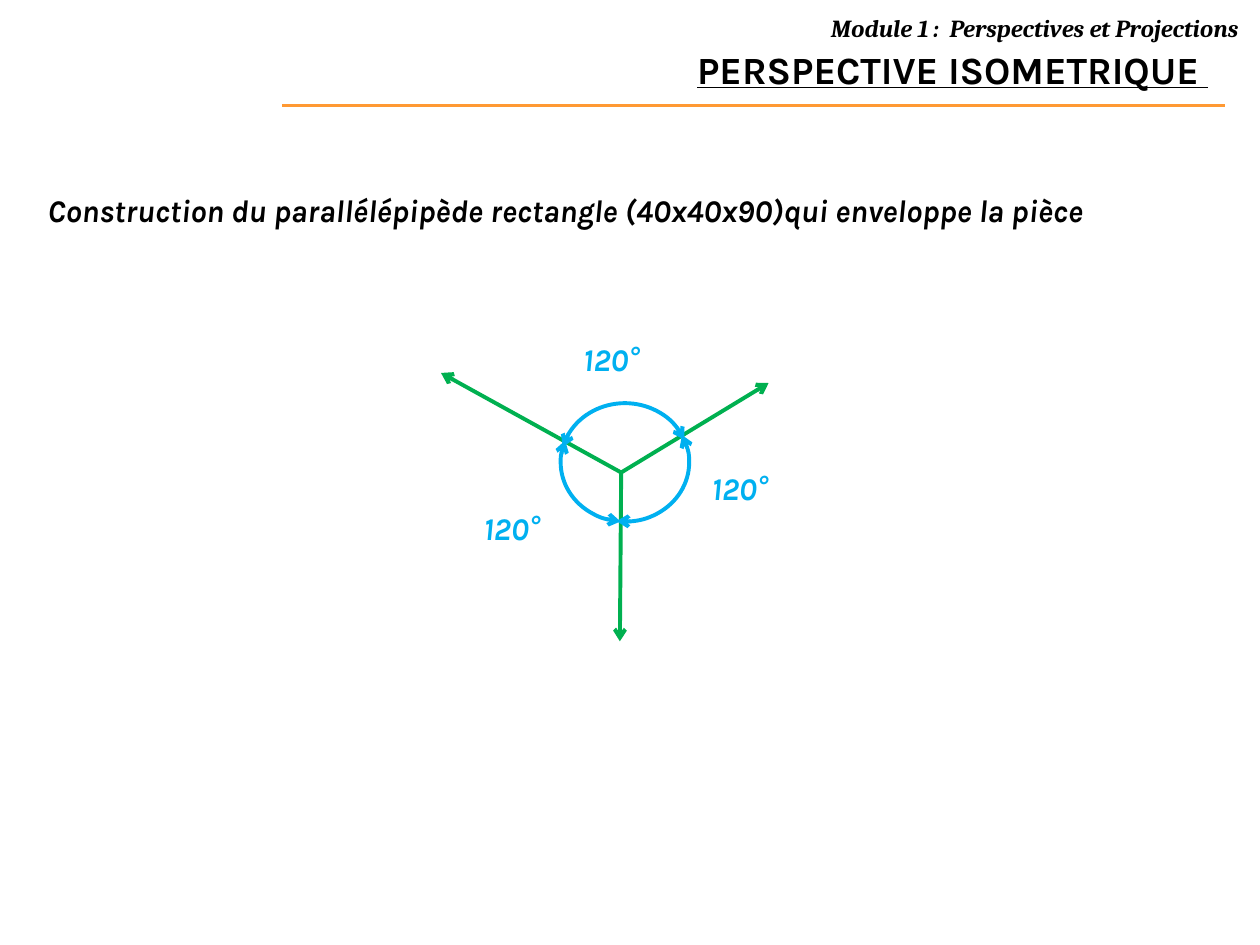
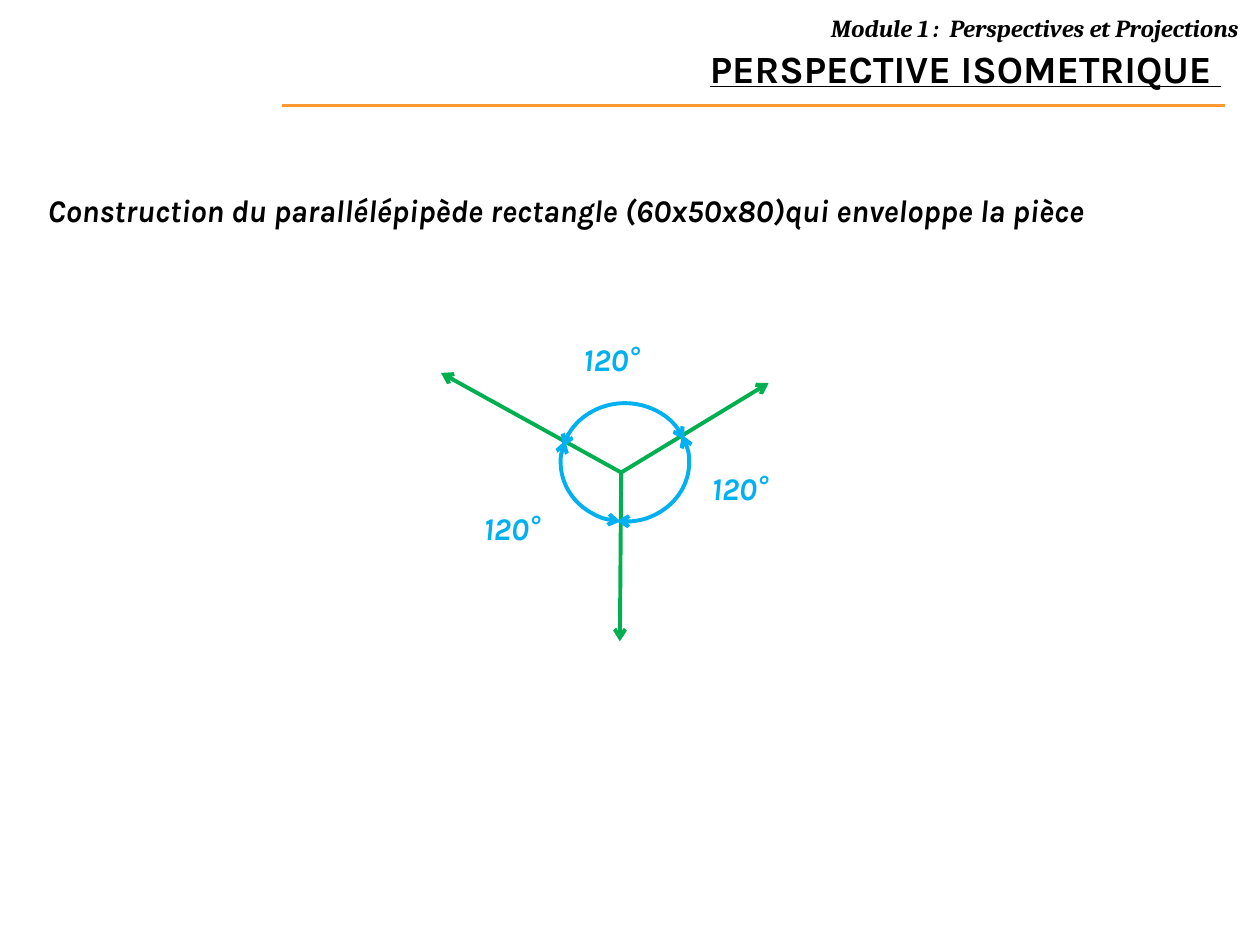
import collections
import dataclasses

import pptx
import pptx.dml.color
import pptx.enum.shapes
import pptx.enum.text
import pptx.oxml.ns
import pptx.util
from lxml import etree

EMU_PER_PX = 9144
ALIGN = pptx.enum.text.PP_ALIGN
SHAPE = pptx.enum.shapes.MSO_SHAPE
Box = collections.namedtuple("Box", "left top width height")


@dataclasses.dataclass(frozen=True)
class Theme:
    """Hold the colours, fonts, type sizes and line widths of the deck."""
    paper: str = "FFFFFF"
    ink: str = "000000"
    rule: str = "FF9933"
    axis: str = "00B050"
    angle: str = "00B0F0"
    module_font: str = "Cambria"
    text_font: str = "Karla"
    module_size: int = 14
    title_size: int = 22
    body_size: int = 18
    rule_width: float = 1.5
    drawing_width: float = 2.25


THEME = Theme()
MODULE_TEXT = "Module 1 :  Perspectives et Projections"
TITLE_TEXT = "PERSPECTIVE ISOMETRIQUE "
HEADER = Box(224, 2, 769, 82)
STATEMENT = Box(28, 147, 937, 58)
DIAGRAM = Box(350, 265, 284, 244)
SLIDES = [
    (Box(201, 32, 768, 117), "40x40x90"),
    (Box(211, 31, 768, 117), "60x50x80"),
]


def px(*lengths):
    """Turn lengths in px into EMU."""
    return [pptx.util.Emu(length * EMU_PER_PX) for length in lengths]


def rgb(colour):
    """Turn a hex string into a colour."""
    return pptx.dml.color.RGBColor.from_string(colour)


def write(shape, text, colour, align=ALIGN.LEFT, **font_format):
    """Write one bold paragraph into a shape and return the paragraph."""
    frame = shape.text_frame
    frame.word_wrap = True
    frame.vertical_anchor = pptx.enum.text.MSO_ANCHOR.TOP
    para = frame.paragraphs[0]
    para.alignment = align
    span = para.add_run()
    span.text = text
    span.font.color.rgb = rgb(colour)
    for name, value in {"bold": True, **font_format}.items():
        setattr(span.font, name, value)
    return para


def body_text(page, box, text, colour):
    """Add a text box in the bold italic body style."""
    write(page.shapes.add_textbox(*px(*box)), text, colour, italic=True,
          name=THEME.text_font, size=pptx.util.Pt(THEME.body_size))


def style_line(shape, colour, width, arrows=()):
    """Set colour and width of a line and add arrowheads at the named ends."""
    shape.line.color.rgb = rgb(colour)
    shape.line.width = pptx.util.Pt(width)
    for end in arrows:
        etree.SubElement(shape.line._get_or_add_ln(), pptx.oxml.ns.qn(f"a:{end}"), type="arrow")


def straight_line(page, start, end, colour, width, arrows=()):
    """Add a straight connector without a shadow."""
    line = page.shapes.add_connector(
        pptx.enum.shapes.MSO_CONNECTOR.STRAIGHT, *px(*start, *end))
    style_line(line, colour, width, arrows)
    etree.SubElement(line._element.spPr, pptx.oxml.ns.qn("a:effectLst"))


def draw_header(page, box):
    """Draw the rule along the bottom of the header and the module name above it."""
    bottom = box.top + box.height
    straight_line(page, (box.left, bottom), (box.left + 748, bottom),
                  THEME.rule, THEME.rule_width)
    band = page.shapes.add_shape(SHAPE.RECTANGLE, *px(box.left + 150, box.top, 619, 34))
    band.shadow.inherit = False
    band.fill.solid()
    band.fill.fore_color.rgb = rgb(THEME.paper)
    band.line.fill.background()
    para = write(band, MODULE_TEXT, THEME.ink, ALIGN.RIGHT, italic=True,
                 name=THEME.module_font, size=pptx.util.Pt(THEME.module_size))
    para.line_spacing = 1.15
    para.space_after = pptx.util.Pt(10)


def draw_title(page, box):
    """Write the underlined slide title."""
    write(page.shapes.add_textbox(*px(*box)), TITLE_TEXT, THEME.ink, ALIGN.RIGHT,
          underline=True, name=THEME.text_font, size=pptx.util.Pt(THEME.title_size))


def draw_axes_diagram(page, box):
    """Draw the three isometric axes with the angles between them."""
    origin = (box.left + 143, box.top + 110)
    for right, down in [(260, 39), (0, 31), (142, 244)]:
        straight_line(page, origin, (box.left + right, box.top + down),
                      THEME.axis, THEME.drawing_width, ["tailEnd"])
    for degrees in [(194.1, 338.9), (334.4, 97.9), (94.3, 200)]:
        arc = page.shapes.add_shape(SHAPE.ARC, *px(box.left + 95, box.top + 55, 102, 94))
        arc.shadow.inherit = False
        arc.fill.background()
        for index, angle in enumerate(degrees):
            arc.adjustments[index] = angle * 0.6
        style_line(arc, THEME.angle, THEME.drawing_width, ["headEnd", "tailEnd"])
    for right, down in [(205, 102), (103, 0), (24, 134)]:
        label = Box(box.left + right, box.top + down, 79, 47)
        body_text(page, label, "120°", THEME.angle)


def build_construction_slide(deck, title_box, dimensions):
    """Build one slide on the enclosing block of the given dimensions."""
    page = deck.slides.add_slide(deck.slide_layouts[6])
    page.background.fill.solid()
    page.background.fill.fore_color.rgb = rgb(THEME.paper)
    draw_header(page, HEADER)
    draw_title(page, title_box)
    body_text(page, STATEMENT,
              f"Construction du parallélépipède rectangle ({dimensions})qui enveloppe la pièce",
              THEME.ink)
    draw_axes_diagram(page, DIAGRAM)


def main():
    """Build and save the deck."""
    deck = pptx.Presentation()
    deck.slide_width, deck.slide_height = px(1000, 750)
    for title_box, dimensions in SLIDES:
        build_construction_slide(deck, title_box, dimensions)
    deck.save("out.pptx")


if __name__ == "__main__":
    main()
